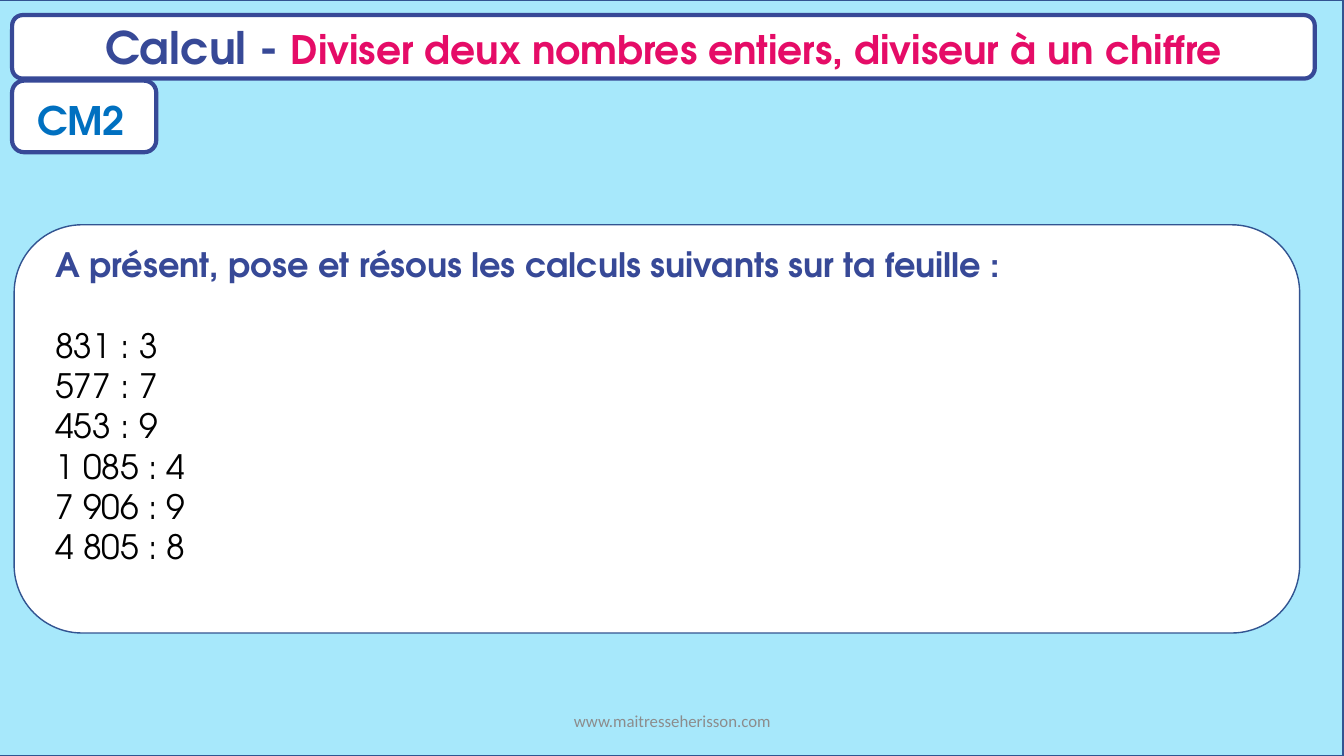
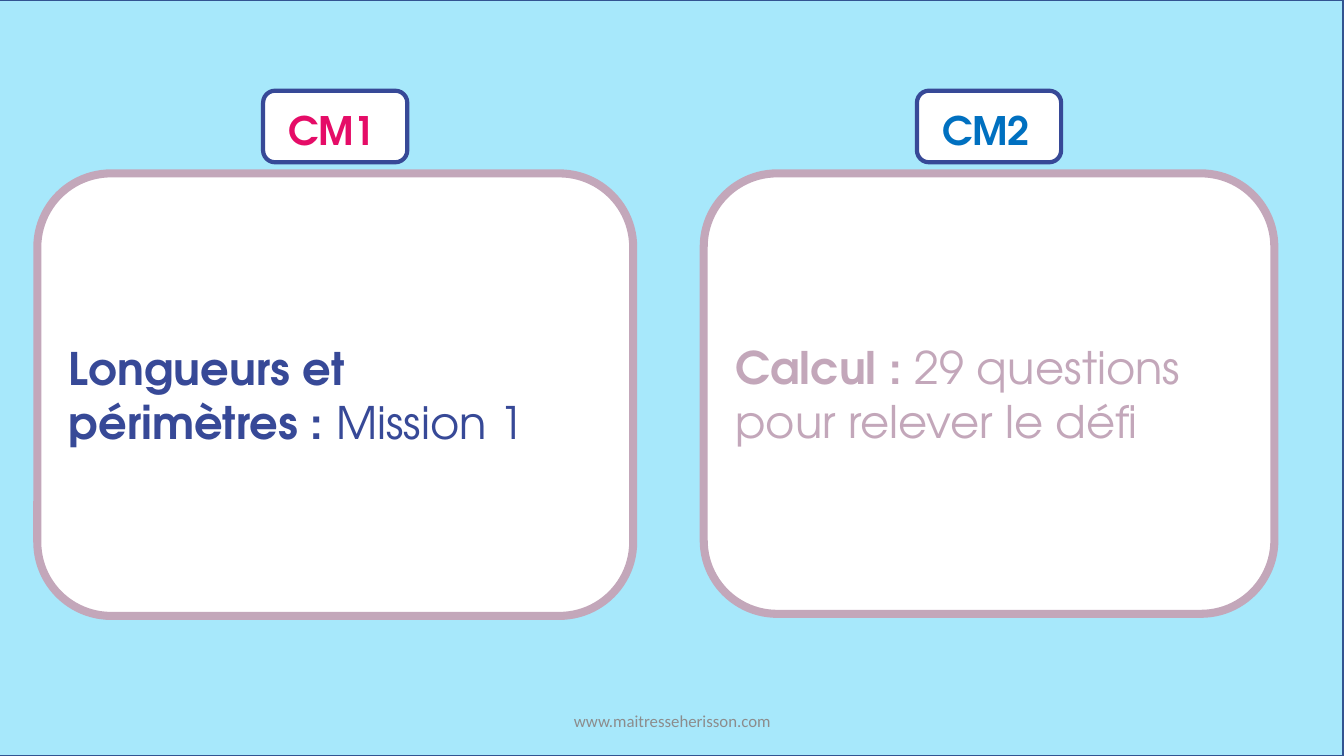
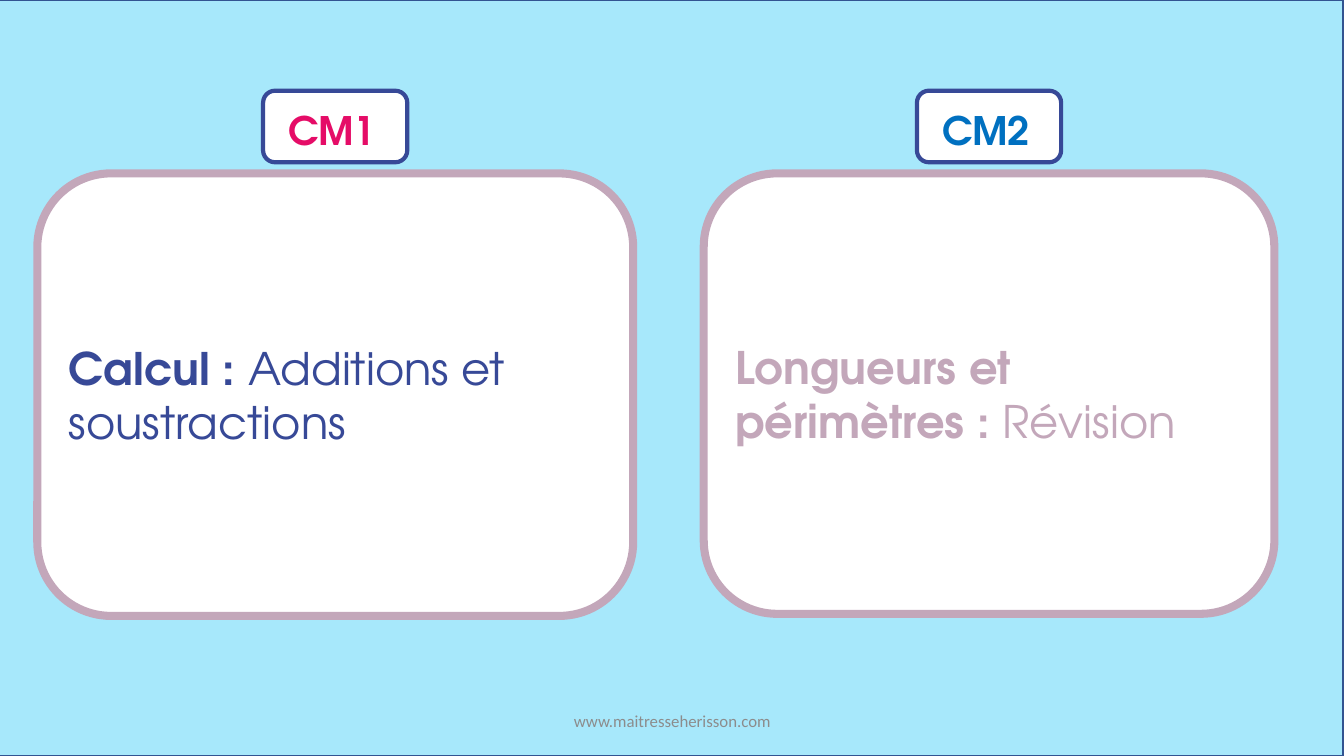
from pptx import Presentation
from pptx.dml.color import RGBColor as RGB
from pptx.enum.shapes import MSO_SHAPE as SHAPE
from pptx.enum.text import MSO_ANCHOR as ANCHOR, PP_ALIGN as ALIGN
from pptx.util import Inches, Pt

WIDTH, HEIGHT = 13.33, 7.5
FONT = "TeX Gyre Adventor"
COLORS = {
    "sky": "A7E8FB", "edge": "325491", "navy": "374997", "pink": "E50C67",
    "blue": "0070C0", "mauve": "C3A7BA", "white": "FFFFFF",
    "black": "000000", "gray": "8C8C8C",
}
LEVELS = {"CM1": "pink", "CM2": "blue"}
BADGE_W, BADGE_H = 1.43, 0.71


def color(name):
    return RGB.from_string(COLORS[name])


def write(frame, paras, size=24, font=FONT, align=ALIGN.LEFT,
          anchor=ANCHOR.TOP, gap=0):
    """Each paragraph is a list of (text, colour, bold[, size]) runs.
    gap is the space in points after the first paragraph."""
    frame.word_wrap = True
    frame.vertical_anchor = anchor
    for i, runs in enumerate(paras):
        para = frame.add_paragraph() if i else frame.paragraphs[0]
        para.alignment = align
        if i == 0 and gap:
            para.space_after = Pt(gap)
        for text, tint, bold, *own in runs:
            run = para.add_run()
            run.text = text
            run.font.name = font
            run.font.size = Pt(own[0] if own else size)
            run.font.bold = bold
            run.font.color.rgb = color(tint)


def shape(parent, box, line, width, fill="white", kind=SHAPE.ROUNDED_RECTANGLE):
    item = parent.shapes.add_shape(kind, *map(Inches, box))
    item.shadow.inherit = False
    item.fill.solid()
    item.fill.fore_color.rgb = color(fill)
    item.line.color.rgb = color(line)
    item.line.width = Pt(width)
    return item


def label(parent, box, paras, **style):
    item = parent.shapes.add_textbox(*map(Inches, box))
    write(item.text_frame, paras, **style)


def backdrop(slide):
    shape(slide, (-0.01, 0, WIDTH, HEIGHT), "edge", 1, "sky", SHAPE.RECTANGLE)


def footer(slide):
    label(slide, (4.42, 6.95, 4.5, 0.4),
          [[("www.maitresseherisson.com", "gray", False)]],
          size=12, font="Calibri", align=ALIGN.CENTER, anchor=ANCHOR.MIDDLE)


def badge(slide, left, top, level):
    group = slide.shapes.add_group_shape()
    shape(group, (left, top, BADGE_W, BADGE_H), "navy", 3)
    label(group, (left + 0.15, top + 0.11, 1.1, 0.57),
          [[(level, LEVELS[level], True)]], size=28)


def title(slide, box, topic, detail):
    bar = shape(slide, box, "navy", 3)
    write(bar.text_frame,
          [[(topic, "navy", True, 32), (detail, "pink", True, 28)]],
          align=ALIGN.CENTER, anchor=ANCHOR.MIDDLE)


def card(slide, box, level, tint, topic, detail):
    """A panel with its level badge centred above it."""
    left, top, width, _ = box
    panel = shape(slide, box, "mauve", 5.75)
    write(panel.text_frame, [[(topic, tint, True), (detail, tint, False)]],
          size=32, anchor=ANCHOR.MIDDLE)
    badge(slide, left + (width - BADGE_W) / 2, top - 0.82, level)


def task(slide, box, prompt, sums):
    left, top, width, height = box
    shape(slide, box, "edge", 1)
    label(slide, (left + 0.31, top + 0.14, width - 0.73, height - 0.72),
          [[(prompt, "navy", True)]] + [[(s, "black", False)] for s in sums],
          gap=29)


def drill(slide):
    task(slide, (0.14, 2.23, 12.75, 4.05),
         "A présent, pose et résous les calculs suivants sur ta feuille :",
         ["831 : 3", "577 : 7", "453 : 9",
          "1 085 : 4", "7 906 : 9", "4 805 : 8"])
    title(slide, (0.12, 0.15, 12.92, 0.63), "Calcul - ",
          "Diviser deux nombres entiers, diviseur à un chiffre")
    badge(slide, 0.12, 0.8, "CM2")


def menu(slide, first, second):
    card(slide, (0.37, 1.72, 5.91, 4.39), "CM1", "navy", *first)
    card(slide, (6.98, 1.72, 5.66, 4.37), "CM2", "mauve", *second)


def main():
    deck = Presentation()
    deck.slide_width, deck.slide_height = Inches(WIDTH), Inches(HEIGHT)
    pages = [
        (drill, ()),
        (menu, (("Longueurs et périmètres : ", "Mission 1"),
                ("Calcul : ", "29 questions pour relever le défi"))),
        (menu, (("Calcul : ", "Additions et soustractions"),
                ("Longueurs et périmètres : ", "Révision"))),
    ]
    for build, parts in pages:
        slide = deck.slides.add_slide(deck.slide_layouts[6])
        backdrop(slide)
        build(slide, *parts)
        footer(slide)
    deck.save("out.pptx")


if __name__ == "__main__":
    main()
